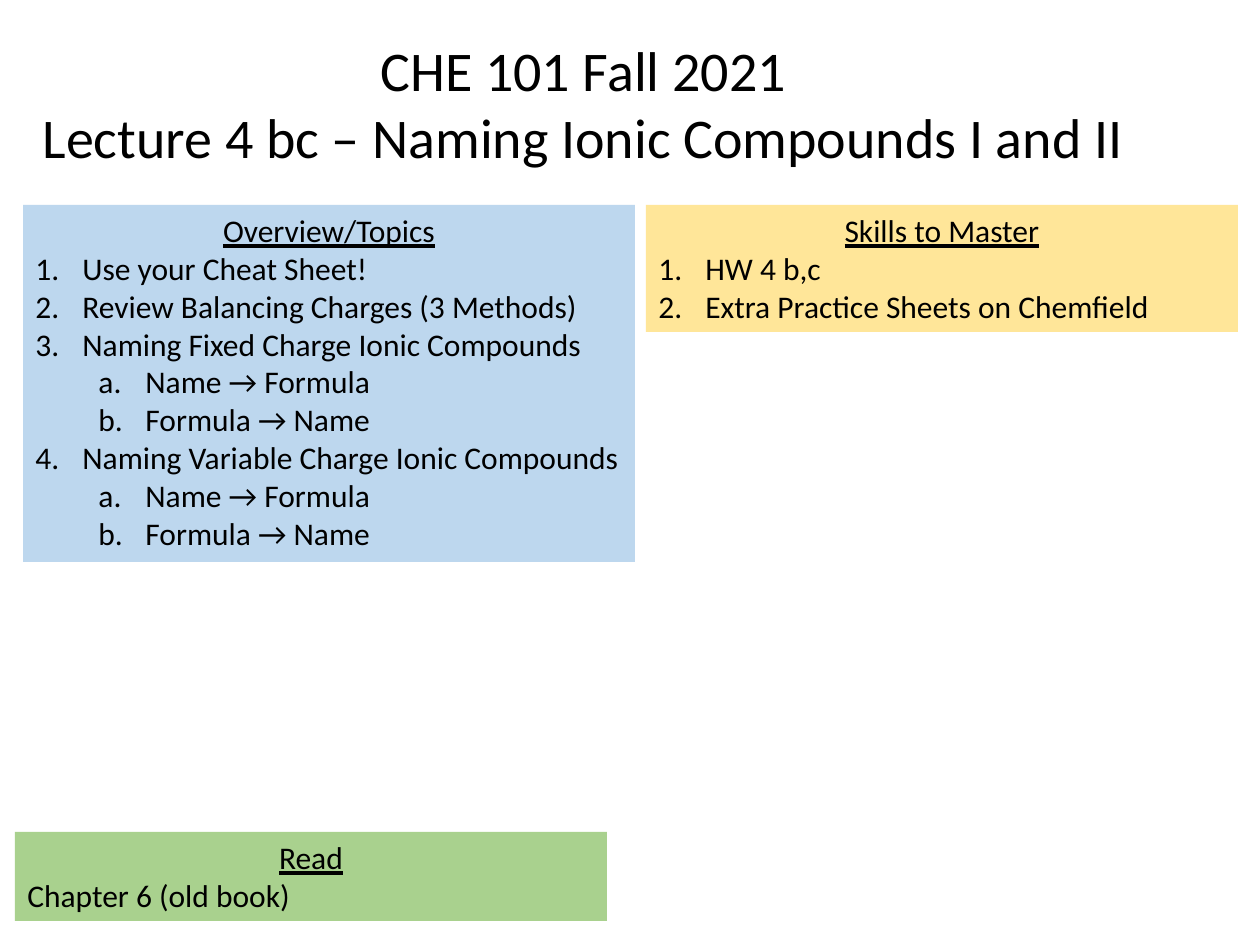
from pptx import Presentation
from pptx.dml.color import RGBColor
from pptx.enum.shapes import MSO_SHAPE as Shape
from pptx.enum.text import MSO_ANCHOR as Anchor, MSO_AUTO_SIZE as AutoSize, PP_ALIGN as Align
from pptx.oxml.xmlchemy import OxmlElement
from pptx.util import Pt

PX = 914400 // 126
FONT = "Calibri"
BLACK = "000000"
INDENT = 47
LEVEL_STEP = 63
NUMBERING = ("arabicPeriod", "alphaLcPeriod")

TITLE = ["CHE 101 Fall 2021", "Lecture 4 bc – Naming Ionic Compounds I and II"]
DIRECTIONS = [(1, "Name → Formula"), (1, "Formula → Name")]
TOPICS = [
    (0, "Use your Cheat Sheet!"),
    (0, "Review Balancing Charges (3 Methods)"),
    (0, "Naming Fixed Charge Ionic Compounds"),
    *DIRECTIONS,
    (0, "Naming Variable Charge Ionic Compounds"),
    *DIRECTIONS,
]
SKILLS = [(0, "HW 4 b,c"), (0, "Extra Practice Sheets on Chemfield")]
READING = [(None, "Chapter 6 (old book)")]


def px(length):
    return length * PX


def color(value):
    return RGBColor.from_string(value)


def add_span(para, text, size, underline=False):
    span = para.add_run()
    span.text = text
    span.font.name = FONT
    span.font.size = Pt(size)
    span.font.underline = underline
    span.font.color.rgb = color(BLACK)


def next_para(frame, align):
    para = frame.paragraphs[0]
    if para.runs:
        para = frame.add_paragraph()
    para.alignment = align
    return para


def number_para(para, level):
    para.level = level
    props = para._p.get_or_add_pPr()
    props.set("marL", str(px(INDENT + LEVEL_STEP * level)))
    props.set("indent", str(-px(INDENT)))
    bullet = OxmlElement("a:buAutoNum")
    bullet.set("type", NUMBERING[level])
    props.append(bullet)


def place_title(page, left, top, width, height):
    title = page.shapes.title
    title.left, title.top = px(left), px(top)
    title.width, title.height = px(width), px(height)
    frame = title.text_frame
    frame.word_wrap = False
    frame.auto_size = AutoSize.SHAPE_TO_FIT_TEXT
    frame.vertical_anchor = Anchor.TOP
    for line in TITLE:
        add_span(next_para(frame, Align.CENTER), line, 32)


def add_panel(page, left, top, width, height, fill, heading, items):
    box = page.shapes.add_shape(Shape.RECTANGLE, px(left), px(top), px(width), px(height))
    box.shadow.inherit = False
    box.fill.solid()
    box.fill.fore_color.rgb = color(fill)
    box.line.fill.background()
    frame = box.text_frame
    frame.word_wrap = True
    frame.auto_size = AutoSize.SHAPE_TO_FIT_TEXT
    frame.vertical_anchor = Anchor.TOP
    add_span(next_para(frame, Align.CENTER), heading, 18, underline=True)
    for level, text in items:
        para = next_para(frame, Align.LEFT)
        if level is not None:
            number_para(para, level)
        add_span(para, text, 18)


def main():
    deck = Presentation()
    deck.slide_width, deck.slide_height = px(1260), px(945)
    page = deck.slides.add_slide(deck.slide_layouts[5])
    place_title(page, 24, 29, 1119, 149)
    add_panel(page, 23, 205, 612, 357, "BDD7EE", "Overview/Topics", TOPICS)
    add_panel(page, 646, 205, 592, 127, "FFE699", "Skills to Master", SKILLS)
    add_panel(page, 15, 832, 592, 89, "A9D18E", "Read", READING)
    deck.save("out.pptx")


if __name__ == "__main__":
    main()
